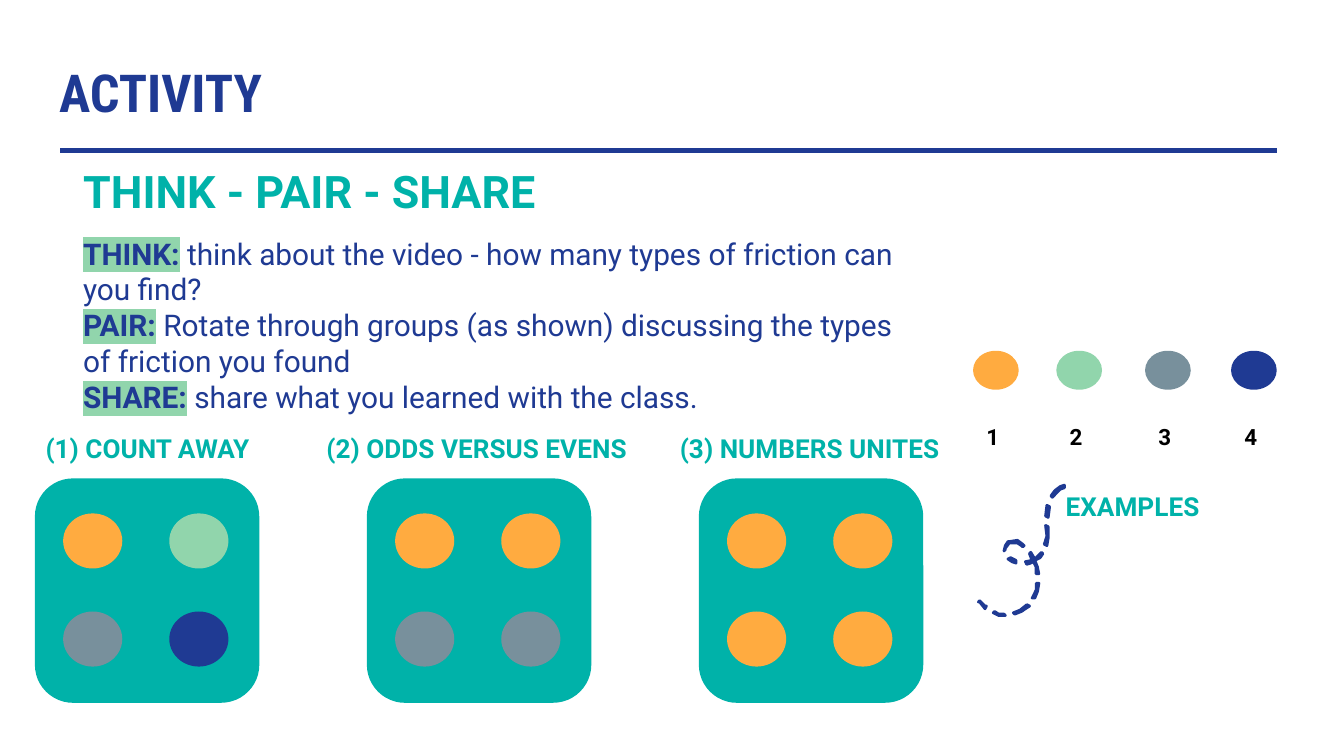
"""Build the Think - Pair - Share activity slide with its grouping diagrams."""
from dataclasses import dataclass

import pptx
import pptx.dml.color
import pptx.enum.shapes
import pptx.enum.text
import pptx.oxml.ns
import pptx.util
from lxml import etree


@dataclass(frozen=True)
class Theme:
    navy: str = "1F3A93"
    teal: str = "00B2A9"
    green: str = "91D5AC"
    grey: str = "78909C"
    orange: str = "FFAB40"
    black: str = "000000"
    body_face: str = "Roboto"
    title_face: str = "Roboto Condensed"
    title: int = 28
    heading: int = 24
    body: int = 16
    label: int = 14
    number: int = 12


THEME = Theme()
TITLE = "ACTIVITY"
HEADING = "THINK - PAIR - SHARE"
STEPS = [
    ("THINK:", " think about the video - how many types of friction can you find?"),
    ("PAIR:", " Rotate through groups (as shown) discussing the types of friction you found"),
    ("SHARE:", " share what you learned with the class."),
]
GROUPS = [
    (THEME.orange, 7.24),
    (THEME.green, 7.86),
    (THEME.grey, 8.52),
    (THEME.navy, 9.16),
]
PANELS = [
    ("(1) COUNT AWAY", 0.24, 1.72, [1, 2, 3, 4]),
    ("(2) ODDS VERSUS EVENS", 2.33, 2.48, [1, 1, 3, 3]),
    ("(3) NUMBERS UNITES", 4.96, 2.89, [1, 1, 1, 1]),
]
EXAMPLES = "EXAMPLES"
ARROW_DASHES = [
    [(7.29, 4.47), (7.28, 4.48), (7.29, 4.48), (7.33, 4.53), (7.34, 4.51), (7.33, 4.51)],
    [(7.4, 4.55), (7.39, 4.56), (7.43, 4.58), (7.48, 4.58), (7.47, 4.57), (7.43, 4.57)],
    [(7.64, 4.5), (7.59, 4.54), (7.54, 4.56), (7.55, 4.57), (7.6, 4.55), (7.63, 4.53),
     (7.66, 4.51)],
    [(7.71, 4.34), (7.71, 4.39), (7.68, 4.45), (7.7, 4.45), (7.72, 4.4), (7.73, 4.34)],
    [(7.5, 4.03), (7.48, 4.06), (7.47, 4.1), (7.48, 4.09), (7.48, 4.08), (7.51, 4.04),
     (7.53, 4.04), (7.57, 4.04), (7.6, 4.06), (7.61, 4.07), (7.62, 4.06), (7.61, 4.05),
     (7.57, 4.02), (7.51, 4.03)],
    [(7.5, 4.16), (7.53, 4.18), (7.56, 4.19), (7.56, 4.17), (7.52, 4.15)],
    [(7.79, 3.76), (7.78, 3.84), (7.8, 3.85), (7.81, 3.77)],
    [(7.89, 3.62), (7.85, 3.65), (7.82, 3.69), (7.83, 3.7), (7.86, 3.67), (7.89, 3.64),
     (7.92, 3.63), (7.92, 3.61)],
    [(7.78, 3.91), (7.79, 3.99), (7.77, 4.05), (7.79, 4.06), (7.8, 4.0), (7.8, 3.92)],
    [(7.67, 4.11), (7.66, 4.12), (7.68, 4.17), (7.63, 4.18), (7.64, 4.2), (7.67, 4.19),
     (7.69, 4.18), (7.71, 4.22), (7.71, 4.27), (7.73, 4.27), (7.72, 4.22), (7.7, 4.17),
     (7.74, 4.15), (7.76, 4.12), (7.75, 4.11), (7.7, 4.16)],
]
SLIDE_WIDTH = 10
SLIDE_HEIGHT = SLIDE_WIDTH * 9 / 16
PANEL_LEFT, PANEL_TOP, PANEL_SIZE, PANEL_STEP = 0.26, 3.56, 1.67, 2.47
DOT_INSET, DOT_STEP, DOT_SIZE = (0.21, 0.26), (0.79, 0.73), (0.44, 0.41)
KEY_TOP, KEY_SIZE = 2.61, (0.34, 0.29)
SHAPE = pptx.enum.shapes.MSO_SHAPE


def inches(*lengths):
    return [pptx.util.Inches(length) for length in lengths]


def rgb(color):
    return pptx.dml.color.RGBColor.from_string(color)


def style(paragraph, size, color, face=THEME.body_face, bold=True):
    paragraph.alignment = pptx.enum.text.PP_ALIGN.LEFT
    font = paragraph.font
    font.name, font.size, font.bold = face, pptx.util.Pt(size), bold
    font.color.rgb = rgb(color)


def prepare(frame):
    frame.word_wrap = True
    frame.auto_size = pptx.enum.text.MSO_AUTO_SIZE.NONE
    frame.vertical_anchor = pptx.enum.text.MSO_ANCHOR.TOP
    frame.margin_left, frame.margin_top, frame.margin_right, frame.margin_bottom = inches(*[0.1] * 4)
    return frame


def add_label(slide, text, box, size, color):
    frame = prepare(slide.shapes.add_textbox(*inches(*box)).text_frame)
    frame.text = text
    style(frame.paragraphs[0], size, color)


def paint(shape, color):
    shape.shadow.inherit = False
    shape.fill.solid()
    shape.fill.fore_color.rgb = rgb(color)
    shape.line.fill.background()


def add_filled(slide, kind, box, color):
    shape = slide.shapes.add_shape(kind, *inches(*box))
    paint(shape, color)
    return shape


def add_title(slide):
    title = slide.shapes.title
    title.left, title.top, title.width, title.height = inches(0.34, 0.35, 9.32, 0.63)
    frame = prepare(title.text_frame)
    frame.text = TITLE
    style(frame.paragraphs[0], THEME.title, THEME.navy, THEME.title_face)
    rule = slide.shapes.add_connector(
        pptx.enum.shapes.MSO_CONNECTOR.STRAIGHT, *inches(0.45, 1.12, 9.5, 1.12))
    rule.line.color.rgb = rgb(THEME.navy)
    rule.line.width = pptx.util.Pt(2.25)
    etree.SubElement(rule._element.spPr, pptx.oxml.ns.qn("a:effectLst"))


def add_steps(slide):
    frame = prepare(slide.shapes.add_textbox(*inches(0.52, 1.65, 6.45, 1.35)).text_frame)
    for index, (keyword, instruction) in enumerate(STEPS):
        paragraph = frame.add_paragraph() if index else frame.paragraphs[0]
        style(paragraph, THEME.body, THEME.navy, bold=False)
        lead = paragraph.add_run()
        lead.text = keyword
        lead.font.bold = True
        highlight = etree.SubElement(lead._r.get_or_add_rPr(), pptx.oxml.ns.qn("a:highlight"))
        etree.SubElement(highlight, pptx.oxml.ns.qn("a:srgbClr"), val=THEME.green)
        paragraph.add_run().text = instruction


def add_panel(slide, index, name, name_left, name_width, members):
    add_label(slide, name, (name_left, 3.12, name_width, 0.44), THEME.label, THEME.teal)
    left = PANEL_LEFT + index * PANEL_STEP
    panel = add_filled(slide, SHAPE.ROUNDED_RECTANGLE,
                       (left, PANEL_TOP, PANEL_SIZE, PANEL_SIZE), THEME.teal)
    panel.adjustments[0] = 0.17
    for place, member in enumerate(members):
        row, column = divmod(place, 2)
        x = left + DOT_INSET[0] + column * DOT_STEP[0]
        y = PANEL_TOP + DOT_INSET[1] + row * DOT_STEP[1]
        add_filled(slide, SHAPE.OVAL, (x, y, *DOT_SIZE), GROUPS[member - 1][0])


def add_key(slide):
    for number, (color, left) in enumerate(GROUPS, start=1):
        add_filled(slide, SHAPE.OVAL, (left, KEY_TOP, *KEY_SIZE), color)
        add_label(slide, str(number), (left, 3.05, 0.34, 0.4), THEME.number, THEME.black)


def add_examples(slide):
    for outline in ARROW_DASHES:
        start, *rest = [inches(*point) for point in outline]
        builder = slide.shapes.build_freeform(*start, scale=1.0)
        builder.add_line_segments(rest, close=True)
        dash = builder.convert_to_shape()
        paint(dash, THEME.navy)
        dash.line.color.rgb = rgb(THEME.navy)
        dash.line.width = pptx.util.Pt(1.5)
    add_label(slide, EXAMPLES, (7.83, 3.55, 1.72, 0.44), THEME.label, THEME.teal)


def main():
    deck = pptx.Presentation()
    deck.slide_width, deck.slide_height = inches(SLIDE_WIDTH, SLIDE_HEIGHT)
    slide = deck.slides.add_slide(deck.slide_layouts.get_by_name("Title Only"))
    add_title(slide)
    add_label(slide, HEADING, (0.52, 1.12, 4.68, 0.63), THEME.heading, THEME.teal)
    add_steps(slide)
    for index, panel in enumerate(PANELS):
        add_panel(slide, index, *panel)
    add_key(slide)
    add_examples(slide)
    deck.save("out.pptx")


if __name__ == "__main__":
    main()
